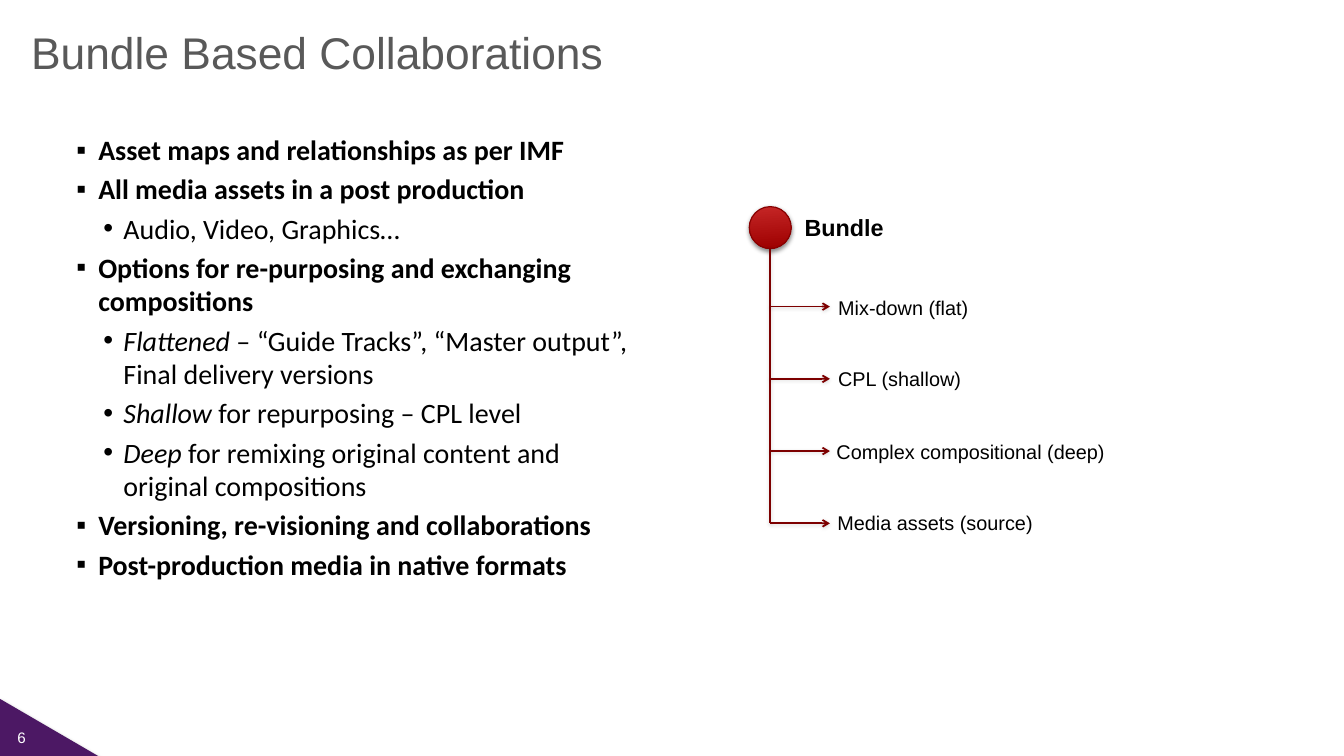
from lxml.etree import SubElement
from pptx import Presentation
from pptx.dml.color import RGBColor
from pptx.enum.shapes import MSO_CONNECTOR as Connector, MSO_SHAPE as Preset
from pptx.enum.text import MSO_ANCHOR as Anchor, MSO_AUTO_SIZE as AutoSize, PP_ALIGN as Align
from pptx.oxml.ns import qn
from pptx.util import Inches, Pt

PURPLE = RGBColor(0x4C, 0x18, 0x64)
GRAY = RGBColor(0x59, 0x59, 0x59)
BLACK = RGBColor(0, 0, 0)
WHITE = RGBColor(0xFF, 0xFF, 0xFF)
RED_TOP = RGBColor(0xC5, 0x26, 0x26)
RED_BOTTOM = RGBColor(0x9D, 0, 0)
RED_OUTLINE = RGBColor(0x87, 0, 0)
RED_LINE = RGBColor(0x7D, 0, 0)

TITLE = "Bundle Based Collaborations"
BULLETS = [
    (0, "", "Asset maps and relationships as per IMF"),
    (0, "", "All media assets in a post production"),
    (1, "", "Audio, Video, Graphics…"),
    (0, "", "Options for re-purposing and exchanging compositions"),
    (1, "Flattened", " – “Guide Tracks”, “Master output”, Final delivery versions"),
    (1, "Shallow", " for repurposing – CPL level"),
    (1, "Deep", " for remixing original content and original compositions"),
    (0, "", "Versioning, re-visioning and collaborations"),
    (0, "", "Post-production media in native formats"),
]
LEVELS = [("▪", 0.26, 0.26), ("•", 0.56, 0.24)]
BRANCHES = [
    ("Mix-down (flat)", 9.88, 3.47),
    ("CPL (shallow)", 9.88, 4.31),
    ("Complex compositional (deep)", 9.86, 5.18),
    ("Media assets (source)", 9.87, 6.03),
]
TRUNK_X, TRUNK_TOP, BRANCH_END = 9.17, 2.95, 9.88
BRANCH_TOP, BRANCH_STEP = 3.65, 0.86


def add_run(paragraph, text, size=17, font="Arial", color=BLACK, bold=False, italic=False):
    run = paragraph.add_run()
    run.text = text
    run.font.size = Pt(size)
    run.font.name = font
    run.font.color.rgb = color
    run.font.bold = bold
    run.font.italic = italic


def place(shape, left, top, width, height):
    shape.left, shape.top = Inches(left), Inches(top)
    shape.width, shape.height = Inches(width), Inches(height)


def add_label(text, left, top, width, height, **style):
    box = slide.shapes.add_textbox(Inches(left), Inches(top), Inches(width), Inches(height))
    frame = box.text_frame
    frame.word_wrap = True
    frame.vertical_anchor = Anchor.MIDDLE
    add_run(frame.paragraphs[0], text, **style)


def add_shadow(effects, opacity, blur, distance):
    shadow = SubElement(effects, qn("a:outerShdw"), blurRad=str(Pt(blur)),
                        dist=str(Pt(distance)), dir="5400000", rotWithShape="0")
    color = SubElement(shadow, qn("a:srgbClr"), val="000000")
    SubElement(color, qn("a:alpha"), val=str(opacity * 1000))


def add_shape(preset, left, top, width, height):
    shape = slide.shapes.add_shape(preset, Inches(left), Inches(top), Inches(width), Inches(height))
    shape.shadow.inherit = False
    add_shadow(shape._element.spPr.find(qn("a:effectLst")), 46, 4, 2)
    return shape


def add_line(x1, y1, x2, y2, arrow=False):
    line = slide.shapes.add_connector(Connector.STRAIGHT, Inches(x1), Inches(y1), Inches(x2), Inches(y2))
    line.line.color.rgb = RED_LINE
    line.line.width = Pt(1.5)
    properties = line._element.spPr
    if arrow:
        SubElement(properties.find(qn("a:ln")), qn("a:tailEnd"), type="arrow")
    add_shadow(SubElement(properties, qn("a:effectLst")), 15, 3, 1)


def add_bullet(paragraph, level, lead, text):
    mark, indent, hanging = LEVELS[level]
    paragraph.level = level
    properties = paragraph._p.get_or_add_pPr()
    properties.set("marL", str(Inches(indent)))
    properties.set("indent", str(-Inches(hanging)))
    SubElement(properties, qn("a:buFont"), typeface="Arial")
    SubElement(properties, qn("a:buChar"), char=mark)
    if lead:
        add_run(paragraph, lead, size=24, font="Calibri", italic=True)
    add_run(paragraph, text, size=24, font="Calibri", bold=level == 0)


presentation = Presentation()
presentation.slide_width, presentation.slide_height = Inches(16), Inches(9)
slide = presentation.slides.add_slide(presentation.slide_layouts[1])

corner = add_shape(Preset.RIGHT_TRIANGLE, 0, 8.32, 1.22, 0.71)
corner.fill.solid()
corner.fill.fore_color.rgb = PURPLE
corner.line.fill.background()
add_label("6", 0.11, 8.62, 0.75, 0.32, size=13, color=WHITE)

title = slide.shapes.title
place(title, 0.23, 0.12, 15.43, 1)
frame = title.text_frame
frame.auto_size = AutoSize.NONE
frame.vertical_anchor = Anchor.MIDDLE
frame.margin_left = frame.margin_right = Inches(0.14)
frame.margin_top = frame.margin_bottom = Inches(0.07)
frame.paragraphs[0].alignment = Align.LEFT
add_run(frame.paragraphs[0], TITLE, size=38, color=GRAY)

body = slide.placeholders[1]
place(body, 0.81, 1.53, 7.01, 6.78)
frame = body.text_frame
frame.auto_size = AutoSize.NONE
for index, bullet in enumerate(BULLETS):
    paragraph = frame.add_paragraph() if index else frame.paragraphs[0]
    add_bullet(paragraph, *bullet)
    paragraph.space_before = Pt(4.8 if index else 0)

bundle = add_shape(Preset.OVAL, 8.92, 2.46, 0.5, 0.5)
bundle.fill.gradient()
bundle.fill.gradient_angle = 274
for stop, color in zip(bundle.fill.gradient_stops, (RED_TOP, RED_BOTTOM)):
    stop.color.rgb = color
bundle.line.color.rgb = RED_OUTLINE
bundle.line.width = Pt(1)
add_label("Bundle", 9.48, 2.49, 3.99, 0.44, size=20, bold=True)

add_line(TRUNK_X, TRUNK_TOP, TRUNK_X, BRANCH_TOP + BRANCH_STEP * (len(BRANCHES) - 1))
for index, (text, left, top) in enumerate(BRANCHES):
    y = BRANCH_TOP + BRANCH_STEP * index
    add_line(TRUNK_X, y, BRANCH_END, y, arrow=True)
    add_label(text, left, top, 3.94, 0.39)

presentation.save("out.pptx")
